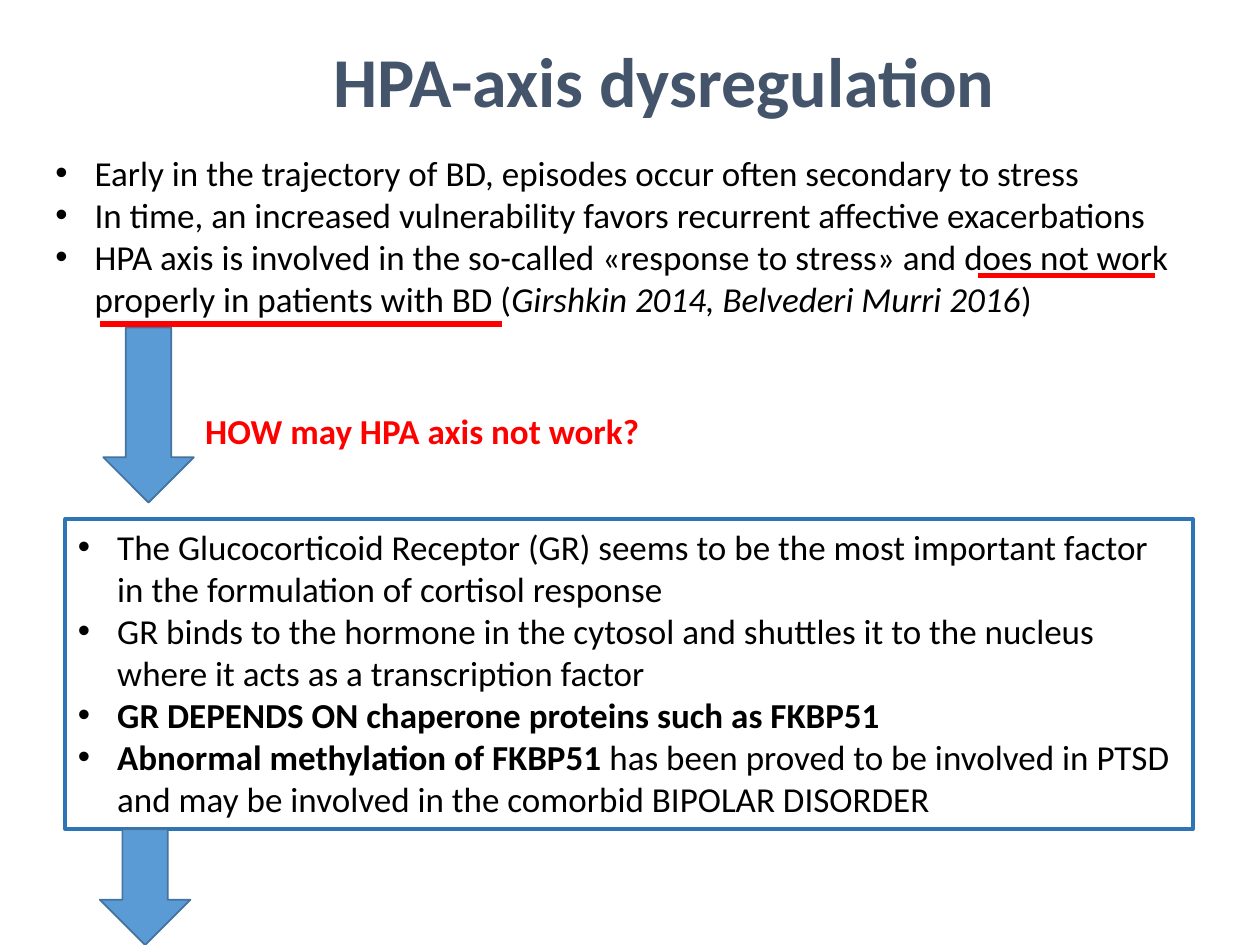
from dataclasses import dataclass
from lxml.etree import SubElement
from pptx import Presentation
from pptx.dml.color import RGBColor
from pptx.enum.shapes import MSO_CONNECTOR, MSO_SHAPE
from pptx.enum.text import PP_ALIGN
from pptx.oxml.ns import qn
from pptx.util import Pt


@dataclass(frozen=True)
class Theme:
    font: str = "Calibri"
    head: int = 40
    body: int = 20
    ink: str = "000000"
    slate: str = "44546A"
    red: str = "FF0000"
    blue: str = "5B9BD5"
    edge: str = "43739E"
    frame: str = "2E75B6"
    paper: str = "FFFFFF"


THEME = Theme()

STRESS = [
    [("Early in the trajectory of BD, episodes occur often secondary to stress", "")],
    [("In time, an increased vulnerability favors recurrent affective exacerbations", "")],
    [("HPA axis is involved in the so-called «response to stress» and does not work "
      "properly in patients with BD (", ""),
     ("Girshkin 2014, Belvederi Murri 2016", "i"), (")", "")],
]
FACTORS = [
    [("The Glucocorticoid Receptor (GR) seems to be the most important factor "
      "in the formulation of cortisol response", "")],
    [("GR binds to the hormone in the cytosol and shuttles it to the nucleus "
      "where it acts as a transcription factor", "")],
    [("GR DEPENDS ON chaperone proteins such as FKBP51", "b")],
    [("Abnormal methylation of FKBP51 ", "b"),
     ("has been proved to be involved in PTSD and may be involved in the "
      "comorbid BIPOLAR DISORDER", "")],
]


def color(code):
    return RGBColor.from_string(code)


def scale(box):
    return [Pt(n) for n in box]


def style(run, size, tint, mark=""):
    font = run.font
    font.name, font.size = THEME.font, Pt(size)
    font.bold, font.italic = mark == "b", mark == "i"
    font.color.rgb = color(tint)


def add_text(slide, box, text, size, tint, align=PP_ALIGN.LEFT):
    frame = slide.shapes.add_textbox(*scale(box)).text_frame
    frame.word_wrap = True
    frame.text = text
    line = frame.paragraphs[0]
    line.alignment = align
    style(line.runs[0], size, tint, "b")


def add_title(slide, box):
    add_text(slide, box, "HPA-axis dysregulation", THEME.head, THEME.slate, PP_ALIGN.CENTER)
    shape = slide.shapes[-1]
    shape.fill.solid()
    shape.fill.fore_color.rgb = color(THEME.paper)


def add_list(slide, box, items, edge=None):
    shape = slide.shapes.add_textbox(*scale(box))
    if edge:
        shape.line.color.rgb = color(edge)
        shape.line.width = Pt(2.25)
    frame = shape.text_frame
    frame.word_wrap = True
    for i, parts in enumerate(items):
        line = frame.paragraphs[0] if i == 0 else frame.add_paragraph()
        props = line._p.get_or_add_pPr()
        props.set("marL", str(Pt(22.5)))
        props.set("indent", str(-Pt(22.5)))
        SubElement(props, qn("a:buFont")).set("typeface", "Arial")
        SubElement(props, qn("a:buChar")).set("char", "•")
        for text, mark in parts:
            run = line.add_run()
            run.text = text
            style(run, THEME.body, THEME.ink, mark)


def add_arrow(slide, box):
    shape = slide.shapes.add_shape(MSO_SHAPE.DOWN_ARROW, *scale(box))
    shape.shadow.inherit = False
    shape.fill.solid()
    shape.fill.fore_color.rgb = color(THEME.blue)
    shape.line.color.rgb = color(THEME.edge)
    shape.line.width = Pt(1)


def add_rule(slide, left, right, top):
    ends = scale((left, top, right, top))
    rule = slide.shapes.add_connector(MSO_CONNECTOR.STRAIGHT, *ends)
    rule.line.color.rgb = color(THEME.red)
    rule.line.width = Pt(3)
    SubElement(rule._element.spPr, qn("a:effectLst"))


def main():
    deck = Presentation()
    deck.slide_width, deck.slide_height = Pt(720), Pt(540)
    slide = deck.slides.add_slide(deck.slide_layouts[6])
    add_title(slide, (87, 18, 584.6, 55.7))
    add_list(slide, (24.5, 82.8, 670.3, 104.4), STRESS)
    add_arrow(slide, (59, 187.2, 51.8, 100))
    add_rule(slide, 558.7, 660.2, 157.5)
    add_rule(slide, 57, 286.6, 185.2)
    add_text(slide, (110.2, 230.4, 293, 31.5), "HOW may HPA axis not work?",
             THEME.body, THEME.red)
    add_list(slide, (37.4, 296.6, 644.4, 177.2), FACTORS, THEME.frame)
    add_arrow(slide, (57, 473.8, 51.8, 66.2))
    deck.save("out.pptx")


if __name__ == "__main__":
    main()
